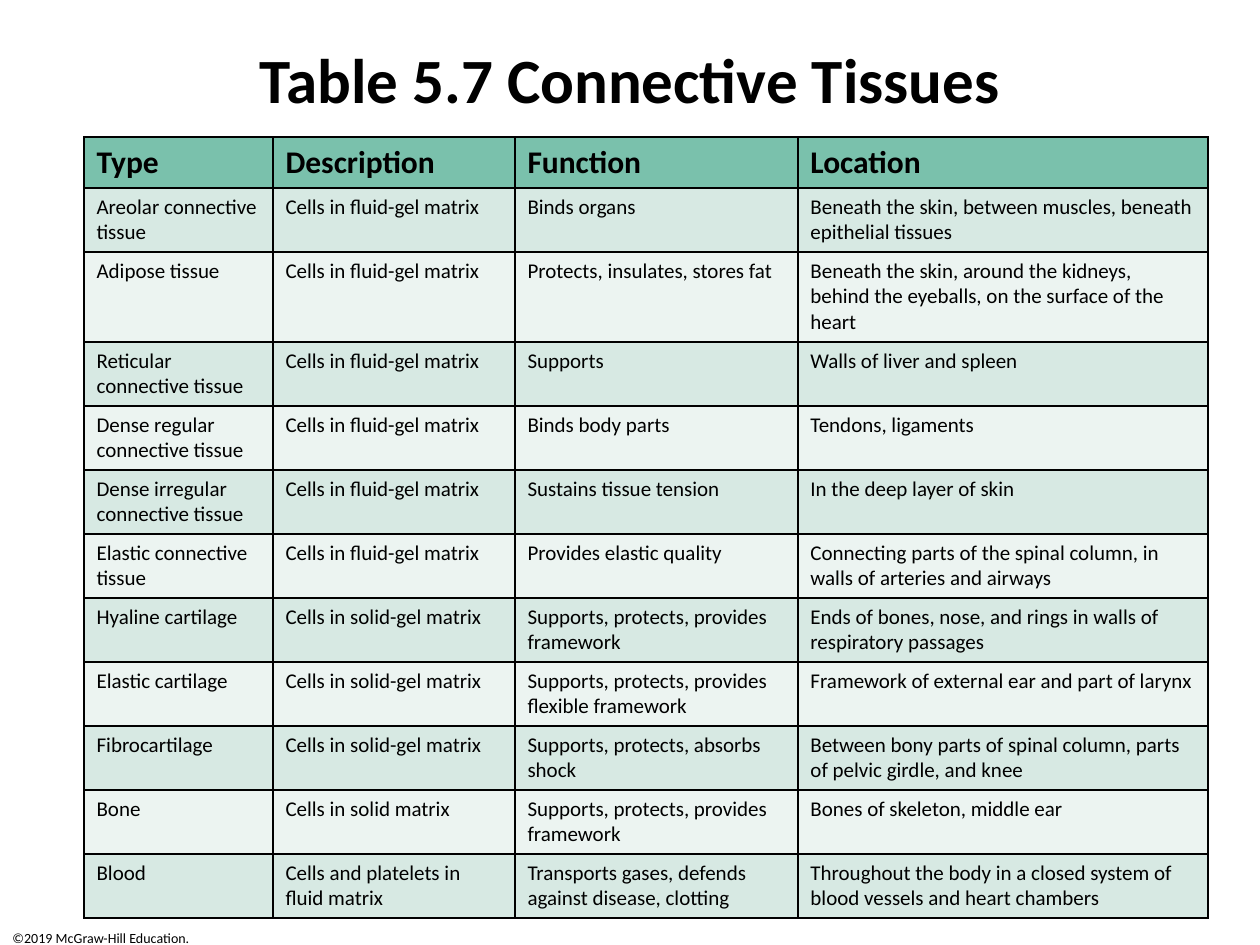
from lxml import etree
from pptx import Presentation
from pptx.dml.color import RGBColor
from pptx.enum.text import MSO_ANCHOR, PP_ALIGN
from pptx.oxml.ns import qn
from pptx.util import Pt

PX = 914400 // 126
TOP = MSO_ANCHOR.TOP
LEFT, CENTER = PP_ALIGN.LEFT, PP_ALIGN.CENTER
BLACK = RGBColor(0x00, 0x00, 0x00)
HEAD = RGBColor(0x7A, 0xC1, 0xAC)
BANDS = RGBColor(0xEC, 0xF4, 0xF1), RGBColor(0xD7, 0xE9, 0xE3)

FLUID, SOLID = "Cells in fluid-gel matrix", "Cells in solid-gel matrix"
FRAME = "Supports, protects, provides framework"
ROWS = [
    ("Type", "Description", "Function", "Location"),
    ("Areolar connective tissue", FLUID, "Binds organs",
     "Beneath the skin, between muscles, beneath epithelial tissues"),
    ("Adipose tissue", FLUID, "Protects, insulates, stores fat",
     "Beneath the skin, around the kidneys, behind the eyeballs, "
     "on the surface of the heart"),
    ("Reticular connective tissue", FLUID, "Supports",
     "Walls of liver and spleen"),
    ("Dense regular connective tissue", FLUID, "Binds body parts",
     "Tendons, ligaments"),
    ("Dense irregular connective tissue", FLUID, "Sustains tissue tension",
     "In the deep layer of skin"),
    ("Elastic connective tissue", FLUID, "Provides elastic quality",
     "Connecting parts of the spinal column, in walls of arteries and airways"),
    ("Hyaline cartilage", SOLID, FRAME,
     "Ends of bones, nose, and rings in walls of respiratory passages"),
    ("Elastic cartilage", SOLID,
     "Supports, protects, provides flexible framework",
     "Framework of external ear and part of larynx"),
    ("Fibrocartilage", SOLID, "Supports, protects, absorbs shock",
     "Between bony parts of spinal column, parts of pelvic girdle, and knee"),
    ("Bone", "Cells in solid matrix", FRAME, "Bones of skeleton, middle ear"),
    ("Blood", "Cells and platelets in fluid matrix",
     "Transports gases, defends against disease, clotting",
     "Throughout the body in a closed system of blood vessels "
     "and heart chambers"),
]
WIDTHS = [189, 242, 283, 410]
HEIGHTS = [51, 64, 90] + [64] * 9


def emu(*lens):
    return [n * PX for n in lens]


def write(frame, text, size, bold=False, align=LEFT):
    frame.text = text
    par = frame.paragraphs[0]
    par.alignment = align
    font = par.runs[0].font
    font.name, font.size, font.bold = "Calibri", Pt(size), bold
    font.color.rgb = BLACK


def set_inset(frame, top):
    frame.vertical_anchor = TOP
    frame.margin_top, frame.margin_bottom = top * PX, 0


def add_title(slide, box):
    title = slide.shapes.title
    title.left, title.top, title.width, title.height = emu(*box)
    write(title.text_frame, "Table 5.7 Connective Tissues", 36, True, CENTER)
    set_inset(title.text_frame, 9)


def add_edges(cell):
    """Draw a thin black line on all four sides of the cell."""
    props = cell._tc.get_or_add_tcPr()
    for i, tag in enumerate(("a:lnL", "a:lnR", "a:lnT", "a:lnB")):
        line = etree.Element(qn(tag), w=str(Pt(1)))
        fill = etree.SubElement(line, qn("a:solidFill"))
        etree.SubElement(fill, qn("a:srgbClr"), val=str(BLACK))
        props.insert(i, line)


def add_grid(slide, left, top):
    box = emu(left, top, sum(WIDTHS), sum(HEIGHTS))
    table = slide.shapes.add_table(len(ROWS), len(WIDTHS), *box).table
    for col, width in zip(table.columns, WIDTHS):
        col.width = width * PX
    for r, (row, height) in enumerate(zip(table.rows, HEIGHTS)):
        row.height = height * PX
        for cell, text in zip(row.cells, ROWS[r]):
            write(cell.text_frame, text, 12 if r else 18, r == 0)
            cell.fill.solid()
            cell.fill.fore_color.rgb = BANDS[r % 2] if r else HEAD
            add_edges(cell)


def add_credit(slide, box):
    frame = slide.shapes.add_textbox(*emu(*box)).text_frame
    frame.word_wrap = True
    write(frame, "©2019 McGraw-Hill Education.", 8)
    set_inset(frame, 6)


def main():
    prs = Presentation()
    prs.slide_width, prs.slide_height = emu(1260, 945)
    slide = prs.slides.add_slide(prs.slide_layouts[5])
    add_credit(slide, (0, 924, 210, 21))
    add_title(slide, (63, 32, 1134, 84))
    add_grid(slide, 84, 137)
    prs.save("out.pptx")


if __name__ == "__main__":
    main()
